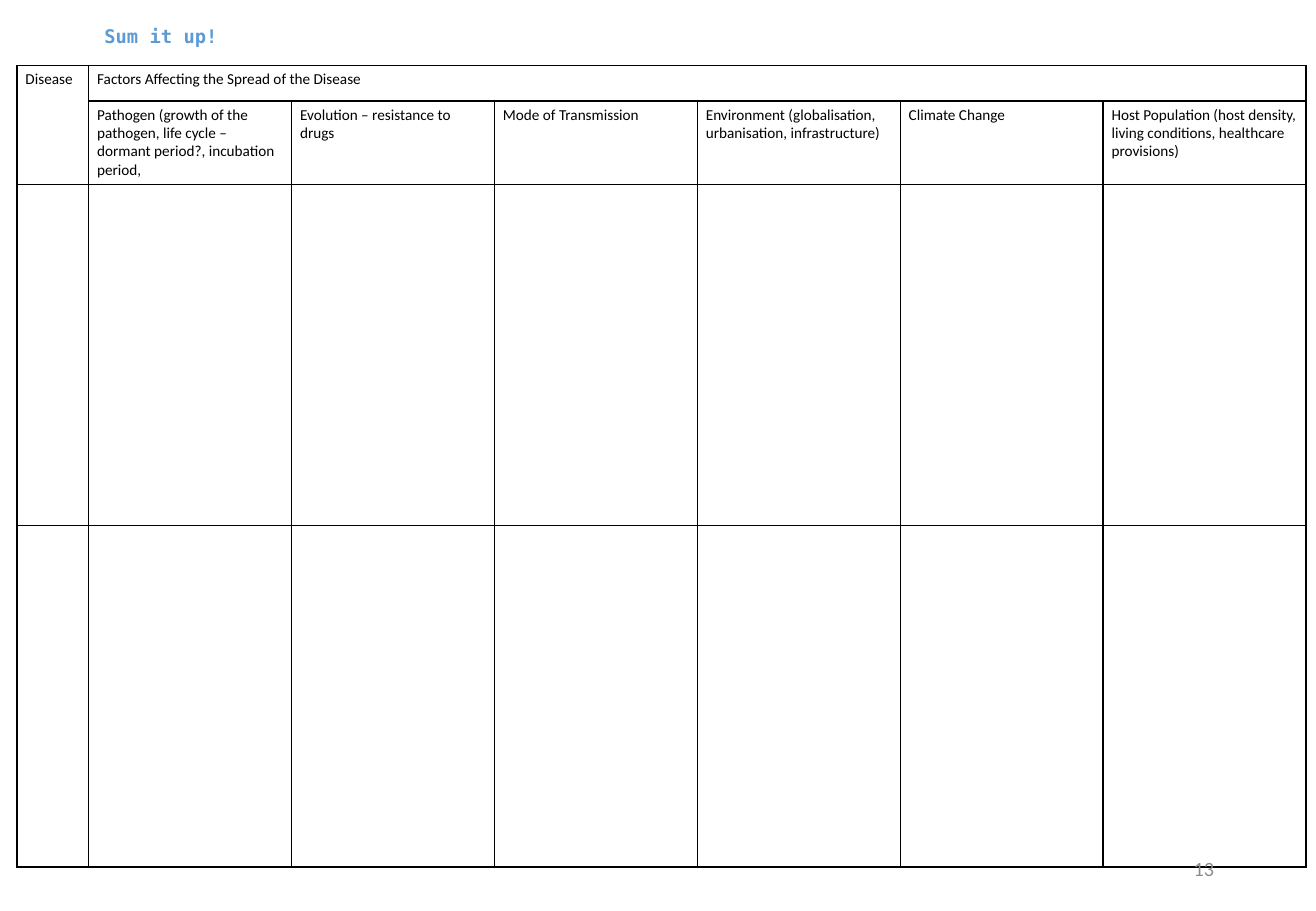
from dataclasses import dataclass

from lxml import etree
from pptx import Presentation
from pptx.dml.color import RGBColor
from pptx.enum import text
from pptx.oxml import ns
from pptx.util import Inches, Pt


@dataclass(frozen=True)
class Theme:
    blue: str = "5B9BD5"
    black: str = "000000"
    white: str = "FFFFFF"
    gray: str = "8C8C8C"
    mono: str = "DejaVu Sans Mono"
    sans: str = "Calibri"
    head: float = 11.1
    cell: float = 9
    page: float = 12


theme = Theme()


def style(para, face, size, color, bold=False):
    font = para.font
    font.name, font.size, font.bold = face, Pt(size), bold
    font.color.rgb = RGBColor.from_string(color)


def border(cell):
    props = cell._tc.get_or_add_tcPr()
    for side in ("lnL", "lnR", "lnT", "lnB"):
        line = etree.SubElement(props, ns.qn(f"a:{side}"), w=str(Pt(1)))
        fill = etree.SubElement(line, ns.qn("a:solidFill"))
        etree.SubElement(fill, ns.qn("a:srgbClr"), val=theme.black)


prs = Presentation()
prs.slide_width, prs.slide_height = Inches(10.83), Inches(7.5)
slide = prs.slides.add_slide(prs.slide_layouts[5])

# Title
title = slide.shapes.title
title.left, title.top = Inches(0.1), Inches(0.06)
title.width, title.height = Inches(2.45), Inches(0.5)
frame = title.text_frame
frame.text = "Sum it up!"
frame.vertical_anchor = text.MSO_ANCHOR.MIDDLE
para = frame.paragraphs[0]
para.alignment = text.PP_ALIGN.CENTER
para.line_spacing = 0.9
style(para, theme.mono, theme.head, theme.blue, True)

# Summary table
factors = [
    "Pathogen (growth of the pathogen, life cycle – dormant period?, incubation period,",
    "Evolution – resistance to drugs",
    "Mode of Transmission",
    "Environment (globalisation, urbanisation, infrastructure)",
    "Climate Change",
    "Host Population (host density, living conditions, healthcare provisions)",
]
widths = [0.59] + [1.67] * len(factors)
heights = [0.29, 0.68, 2.81, 2.81]
table = slide.shapes.add_table(
    len(heights), len(widths), Inches(0.14), Inches(0.54),
    Inches(sum(widths)), Inches(sum(heights))).table
table.first_row = table.horz_banding = False
for col, width in zip(table.columns, widths):
    col.width = Inches(width)
for row, height in zip(table.rows, heights):
    row.height = Inches(height)

table.cell(0, 0).merge(table.cell(1, 0))
table.cell(0, 1).merge(table.cell(0, len(factors)))
table.cell(0, 0).text = "Disease"
table.cell(0, 1).text = "Factors Affecting the Spread of the Disease"
for col, factor in enumerate(factors, 1):
    table.cell(1, col).text = factor

for cell in table.iter_cells():
    border(cell)
    cell.fill.solid()
    cell.fill.fore_color.rgb = RGBColor.from_string(theme.white)
    cell.margin_left = cell.margin_right = Inches(0.07)
    cell.margin_top = cell.margin_bottom = Inches(0.04)
    style(cell.text_frame.paragraphs[0], theme.sans, theme.cell, theme.black)

# Page number
page = slide.shapes.add_textbox(
    Inches(7.65), Inches(6.95), Inches(2.44), Inches(0.4))
frame = page.text_frame
frame.word_wrap = True
frame.vertical_anchor = text.MSO_ANCHOR.MIDDLE
frame.text = "13"
para = frame.paragraphs[0]
para.alignment = text.PP_ALIGN.RIGHT
style(para, theme.sans, theme.page, theme.gray)

prs.save("out.pptx")
